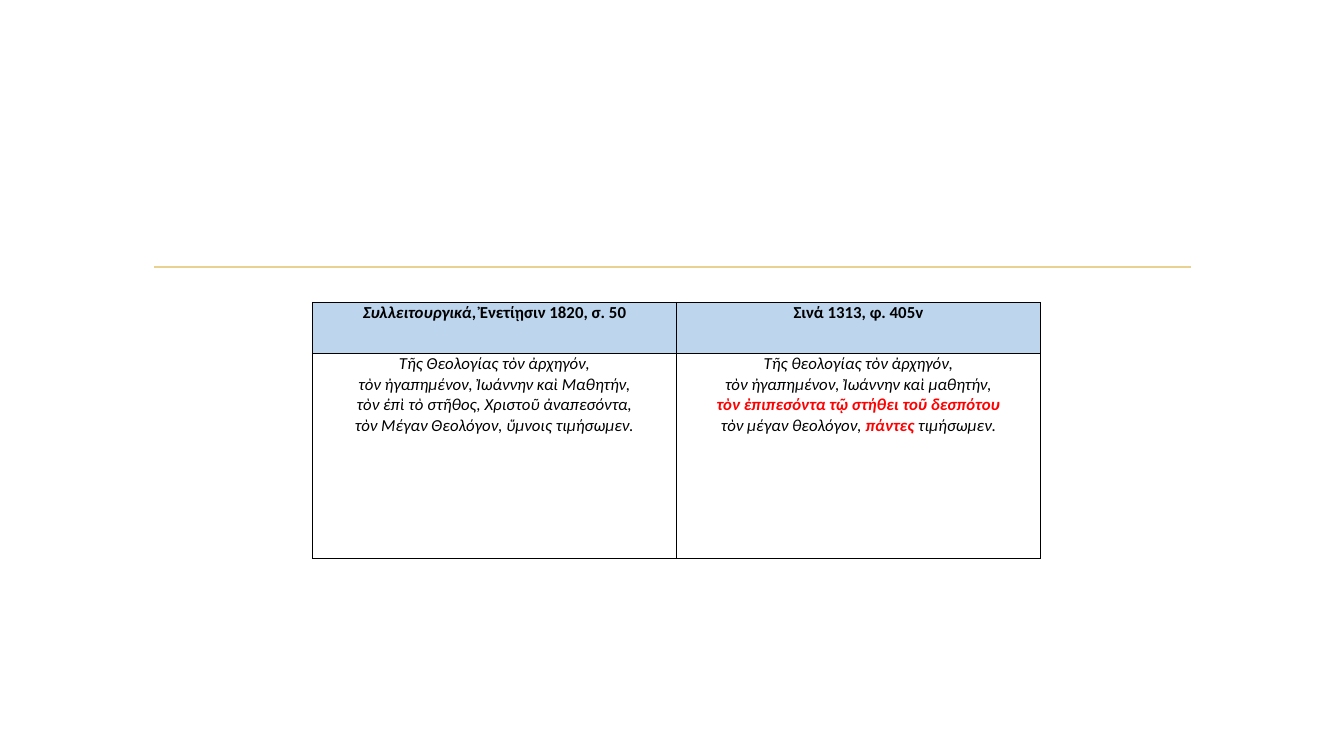
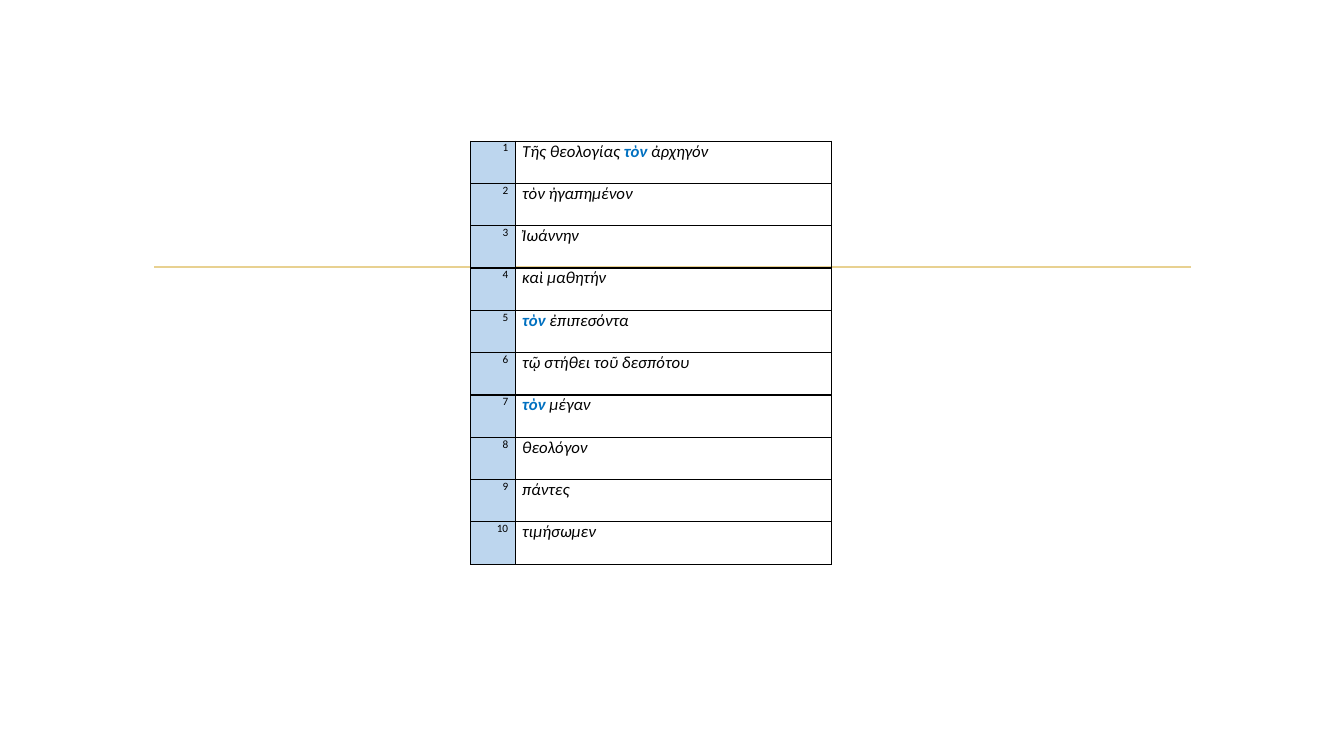
import dataclasses
import typing

import pptx
import pptx.dml.color
import pptx.enum.shapes
import pptx.enum.text
import pptx.oxml.ns
import pptx.presentation
import pptx.slide
import pptx.table
import pptx.util
from lxml import etree

ALIGN = pptx.enum.text.PP_ALIGN
PX = 9144  # EMU in one px, at 100 px to the inch


# Theme
@dataclasses.dataclass(frozen=True)
class Theme:
    font: str = "Calibri"
    ink: str = "000000"
    variant: str = "FF0000"
    article: str = "0070C0"
    band: str = "BDD6EE"
    rule: str = "E8D191"
    text_size: int = 12
    number_size: int = 8
    border_width: float = 1
    rule_width: float = 1.25


THEME = Theme()


# Content types
@dataclasses.dataclass(frozen=True)
class Span:
    text: str
    color: str = THEME.ink
    bold: bool = False
    italic: bool = True
    size: int = THEME.text_size


Line = tuple[Span, ...]


@dataclasses.dataclass(frozen=True)
class CellText:
    lines: tuple[Line, ...]
    align: ALIGN
    fill: typing.Optional[str] = None


@dataclasses.dataclass(frozen=True)
class Grid:
    left: int
    top: int
    columns: tuple[int, ...]
    rows: tuple[int, ...]
    cells: tuple[tuple[CellText, ...], ...]


def px(length: int) -> pptx.util.Emu:
    return pptx.util.Emu(length * PX)


def rgb(color: str) -> pptx.dml.color.RGBColor:
    return pptx.dml.color.RGBColor.from_string(color)


def heading(*spans: Span) -> CellText:
    return CellText((spans,), ALIGN.CENTER, THEME.band)


def verse(*lines: Line) -> CellText:
    return CellText(lines, ALIGN.CENTER)


def numbered(number: int, line: Line) -> tuple[CellText, CellText]:
    label = Span(str(number), italic=False, size=THEME.number_size)
    return (CellText(((label,),), ALIGN.RIGHT, THEME.band),
            CellText((line,), ALIGN.JUSTIFY))


# Drawing
def add_layout_rule(layout: pptx.slide.SlideLayout, page: pptx.slide.Slide) -> None:
    """Draw the gold rule and hand it to the layout that the pages share."""
    rule = page.shapes.add_connector(
        pptx.enum.shapes.MSO_CONNECTOR.STRAIGHT, px(153), px(265), px(1181), px(265))
    rule.line.color.rgb = rgb(THEME.rule)
    rule.line.width = pptx.util.Pt(THEME.rule_width)
    properties = rule.element.find(pptx.oxml.ns.qn("p:spPr"))
    etree.SubElement(properties, pptx.oxml.ns.qn("a:effectLst"))
    identity = next(rule.element.iter(pptx.oxml.ns.qn("p:cNvPr")))
    identity.set("id", "100")
    layout.shapes.element.append(rule.element)


def add_borders(cell: pptx.table._Cell) -> None:
    qn = pptx.oxml.ns.qn
    properties = cell._tc.get_or_add_tcPr()
    for side in ("a:lnL", "a:lnR", "a:lnT", "a:lnB"):
        border = etree.SubElement(properties, qn(side))
        border.set("w", str(int(pptx.util.Pt(THEME.border_width))))
        fill = etree.SubElement(border, qn("a:solidFill"))
        etree.SubElement(fill, qn("a:srgbClr")).set("val", THEME.ink)


def write_cell(cell: pptx.table._Cell, content: CellText) -> None:
    add_borders(cell)
    cell.margin_left = cell.margin_right = px(7)
    cell.margin_top = cell.margin_bottom = 0
    if content.fill:
        cell.fill.solid()
        cell.fill.fore_color.rgb = rgb(content.fill)
    else:
        cell.fill.background()

    frame = cell.text_frame
    for index, line in enumerate(content.lines):
        para = frame.add_paragraph() if index else frame.paragraphs[0]
        para.alignment = content.align
        for span in line:
            run = para.add_run()
            run.text = span.text
            run.font.name = THEME.font
            run.font.size = pptx.util.Pt(span.size)
            run.font.bold = span.bold
            run.font.italic = span.italic
            run.font.color.rgb = rgb(span.color)


def add_grid(page: pptx.slide.Slide, grid: Grid) -> None:
    table = page.shapes.add_table(
        len(grid.rows), len(grid.columns), px(grid.left), px(grid.top),
        px(sum(grid.columns)), px(sum(grid.rows))).table
    table.first_row = table.horz_banding = False
    for column, width in zip(table.columns, grid.columns):
        column.width = px(width)
    for row, height, contents in zip(table.rows, grid.rows, grid.cells):
        row.height = px(height)
        for cell, content in zip(row.cells, contents):
            write_cell(cell, content)


# Slide 1: the two versions of the hymn side by side
VERSIONS = Grid(
    left=310, top=300, columns=(361, 361), rows=(51, 203),
    cells=(
        (
            heading(Span("Συλλειτουργικά", bold=True),
                    Span(", Ἐνετίῃσιν 1820, σ. 50", bold=True, italic=False)),
            heading(Span("Σινά 1313, φ. 405v", bold=True, italic=False)),
        ),
        (
            verse((Span("Τῆς Θεολογίας τὸν ἀρχηγόν,"),),
                  (Span("τὸν ἠγαπημένον, Ἰωάννην καὶ Μαθητήν,"),),
                  (Span("τὸν ἐπὶ τὸ στῆθος, Χριστοῦ ἀναπεσόντα,"),),
                  (Span("τὸν Μέγαν Θεολόγον, ὕμνοις τιμήσωμεν."),)),
            verse((Span("Τῆς θεολογίας τὸν ἀρχηγόν,"),),
                  (Span("τὸν ἠγαπημένον, Ἰωάννην καὶ μαθητήν,"),),
                  (Span("τὸν ἐπιπεσόντα τῷ στήθει τοῦ δεσπότου",
                        THEME.variant, bold=True),),
                  (Span("τὸν μέγαν θεολόγον, "),
                   Span("πάντες ", THEME.variant, bold=True),
                   Span("τιμήσωμεν."))),
        ),
    ),
)

# Slide 2: the hymn divided into ten numbered phrases
ARTICLE = Span("τὸν", THEME.article, bold=True)
PHRASES: tuple[Line, ...] = (
    (Span("Τῆς θεολογίας "), ARTICLE, Span(" ἀρχηγόν")),
    (Span("τὸν ἠγαπημένον"),),
    (Span("Ἰωάννην"),),
    (Span("καὶ μαθητήν"),),
    (ARTICLE, Span(" ἐπιπεσόντα")),
    (Span("τῷ στήθει τοῦ δεσπότου"),),
    (ARTICLE, Span(" μέγαν")),
    (Span("θεολόγον"),),
    (Span("πάντες"),),
    (Span("τιμήσωμεν"),),
)
DIVISION = Grid(
    left=467, top=140, columns=(44, 314), rows=(42,) * len(PHRASES),
    cells=tuple(numbered(number, line) for number, line in enumerate(PHRASES, 1)),
)


def main() -> None:
    deck = pptx.Presentation()
    deck.slide_width, deck.slide_height = px(1333), px(750)
    layout = deck.slide_layouts.get_by_name("Blank")
    pages = [deck.slides.add_slide(layout) for _ in range(2)]
    add_layout_rule(layout, pages[0])
    for page, grid in zip(pages, (VERSIONS, DIVISION)):
        add_grid(page, grid)
    deck.save("out.pptx")


if __name__ == "__main__":
    main()
